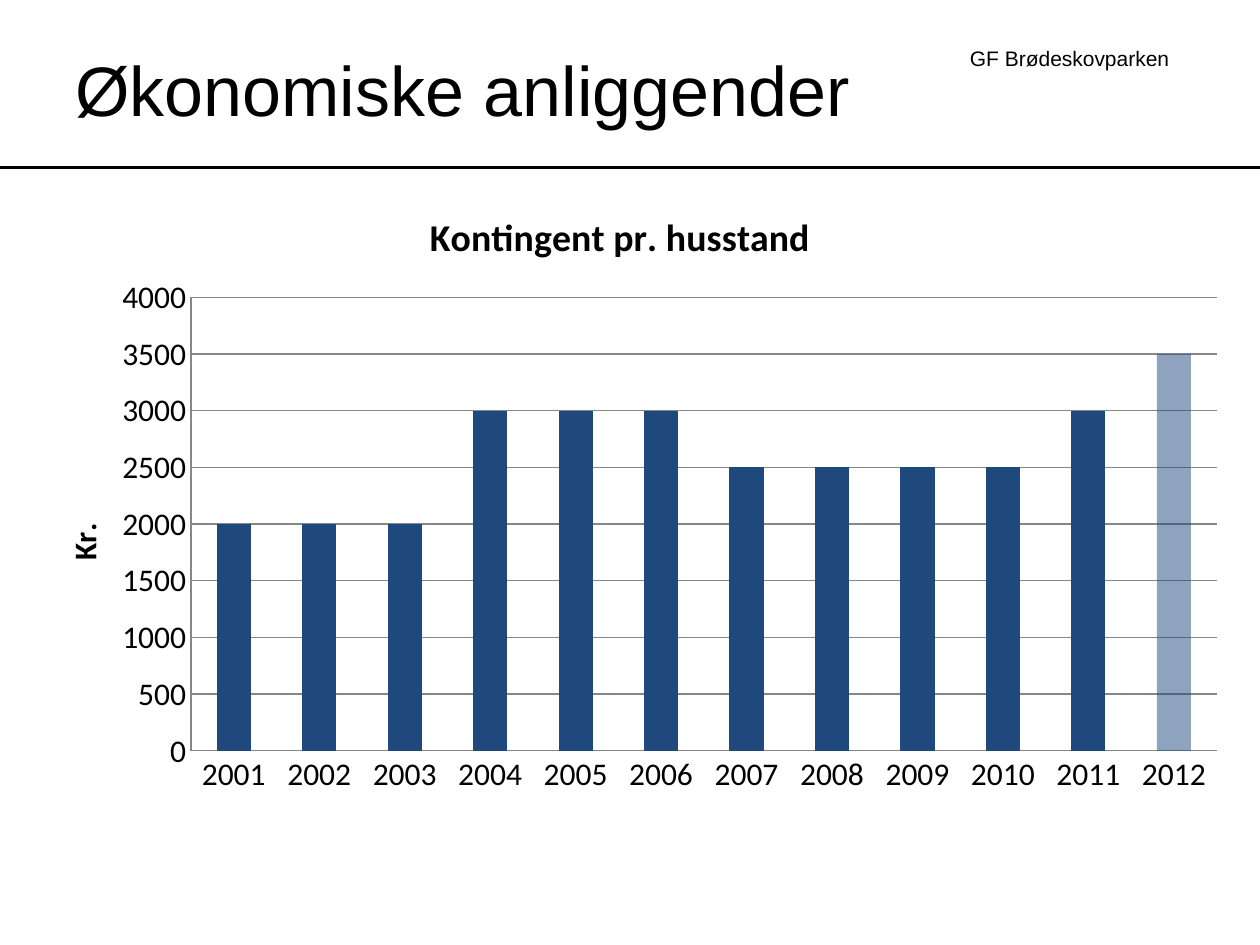
"""Build a slide with a column chart of the yearly fee per household."""
from dataclasses import dataclass
from typing import Any

from lxml.etree import SubElement
from pptx import Presentation
from pptx.chart.data import CategoryChartData
from pptx.dml.color import RGBColor
from pptx.enum.chart import XL_CHART_TYPE, XL_TICK_MARK
from pptx.enum.shapes import MSO_CONNECTOR
from pptx.enum.text import MSO_ANCHOR, PP_ALIGN
from pptx.oxml import parse_xml
from pptx.oxml.ns import nsdecls, qn
from pptx.util import Inches, Pt

COLORS = {"text": "000000", "bar": "1F497D", "grid": "878787"}
FEES = {
    **dict.fromkeys(range(2001, 2004), 2000),
    **dict.fromkeys(range(2004, 2007), 3000),
    **dict.fromkeys(range(2007, 2011), 2500),
    2011: 3000,
    2012: 3500,
}


@dataclass(frozen=True)
class Box:
    """A place in inches on the slide."""
    left: float
    top: float
    width: float
    height: float

    def lengths(self) -> tuple:
        return tuple(map(Inches, (self.left, self.top, self.width, self.height)))


def color(name: str) -> RGBColor:
    return RGBColor.from_string(COLORS[name])


def write_text(frame: Any, text: str, *, size: float, font: str = "Arial",
               bold: bool = False, align: Any = None) -> None:
    paragraph = frame.paragraphs[0]
    paragraph.alignment = align
    run = paragraph.add_run()
    run.text = text
    run.font.name = font
    run.font.size = Pt(size)
    run.font.bold = bold
    run.font.color.rgb = color("text")


def place_chart_part(element: Any, index: int, **fractions: float) -> None:
    """Give a chart part a manual layout in fractions of the chart."""
    for old_layout in element.findall(qn("c:layout")):
        element.remove(old_layout)
    target = '<c:layoutTarget val="inner"/>' if "w" in fractions else ""
    modes = "".join(f'<c:{axis}Mode val="edge"/>' for axis in "xy")
    values = "".join(f'<c:{key} val="{value}"/>' for key, value in fractions.items())
    element.insert(index, parse_xml(
        f'<c:layout {nsdecls("c")}><c:manualLayout>{target}{modes}{values}'
        "</c:manualLayout></c:layout>"))


def add_header(slide: Any) -> None:
    label = slide.shapes.add_textbox(*Box(7.58, 0.31, 1.8, 0.3).lengths())
    label.text_frame.word_wrap = True
    write_text(label.text_frame, "GF Brødeskovparken", size=12, align=PP_ALIGN.RIGHT)

    rule = slide.shapes.add_connector(
        MSO_CONNECTOR.STRAIGHT, 0, Inches(1.33), Inches(10), Inches(1.33))
    rule.line.color.rgb = color("text")
    rule.line.width = Pt(1.5)
    SubElement(rule._element.spPr, qn("a:effectLst"))

    title = slide.shapes.title
    title.left, title.top, title.width, title.height = Box(0.5, 0.23, 7, 0.94).lengths()
    title.text_frame.vertical_anchor = MSO_ANCHOR.MIDDLE
    write_text(title.text_frame, "Økonomiske anliggender", size=40, align=PP_ALIGN.LEFT)


def format_axis(axis: Any) -> None:
    axis.major_tick_mark = axis.minor_tick_mark = XL_TICK_MARK.NONE
    axis.format.line.color.rgb = color("grid")
    axis.format.line.width = Pt(0.75)


def add_fee_chart(slide: Any) -> None:
    data = CategoryChartData()
    data.categories = [str(year) for year in FEES]
    data.add_series("Series 1", FEES.values())
    chart = slide.shapes.add_chart(
        XL_CHART_TYPE.COLUMN_CLUSTERED, *Box(0.16, 1.41, 9.69, 5).lengths(), data).chart
    chart.has_legend = False
    chart.font.name = "Calibri"
    chart.font.size = Pt(18)
    chart.font.color.rgb = color("text")

    write_text(chart.chart_title.text_frame, "Kontingent pr. husstand",
               size=21.6, font="Calibri", bold=True)
    place_chart_part(chart.chart_title._element, 1, x=0.33, y=0.04)
    place_chart_part(chart.plots[0]._element.getparent(), 0, x=0.14, y=0.19, w=0.84, h=0.72)

    value_axis = chart.value_axis
    value_axis.minimum_scale, value_axis.maximum_scale = 0, 4000
    value_axis.major_unit = 500
    value_axis.has_major_gridlines = True
    gridline = value_axis.major_gridlines.format.line
    gridline.color.rgb = color("grid")
    gridline.width = Pt(0.75)
    write_text(value_axis.axis_title.text_frame, "Kr.", size=18, font="Calibri", bold=True)
    place_chart_part(value_axis.axis_title._element, 1, x=0.03, y=0.54)
    for axis in (chart.category_axis, value_axis):
        format_axis(axis)

    plot = chart.plots[0]
    plot.gap_width = 150
    plot.vary_by_categories = False
    series = plot.series[0]
    planned_bar = series.points[len(FEES) - 1]
    for bar in (series, planned_bar):
        bar.format.fill.solid()
        bar.format.fill.fore_color.rgb = color("bar")
    planned_color = planned_bar.format.fill._xPr.find(f".//{qn('a:srgbClr')}")
    SubElement(planned_color, qn("a:alpha"), val="50000")


def main() -> None:
    presentation = Presentation()
    presentation.slide_width, presentation.slide_height = Inches(10), Inches(7.5)
    slide = presentation.slides.add_slide(presentation.slide_layouts[5])
    add_header(slide)
    add_fee_chart(slide)
    presentation.save("out.pptx")


if __name__ == "__main__":
    main()
